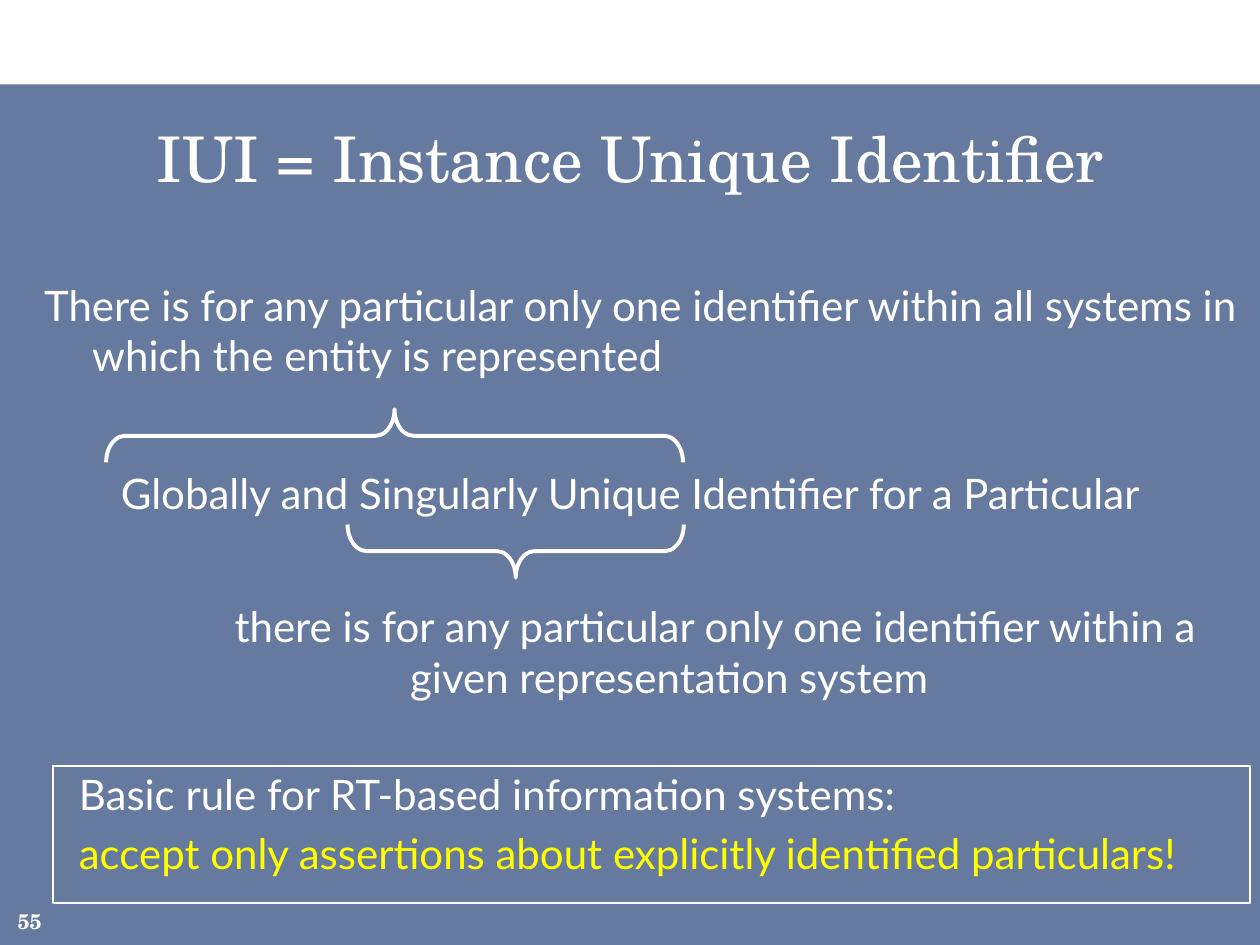
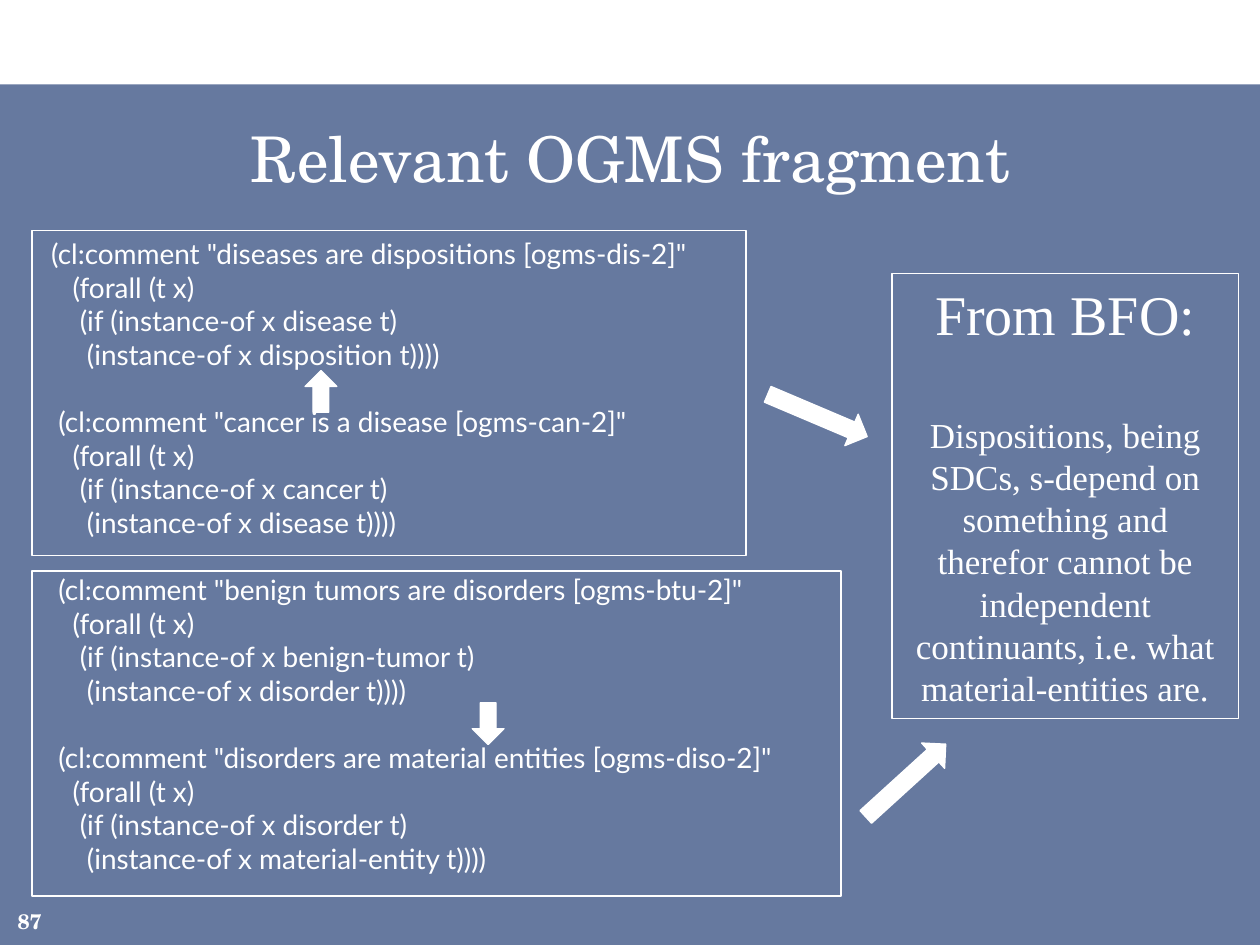
import lxml.etree
import pptx
import pptx.dml.color
import pptx.enum.shapes
import pptx.enum.text
import pptx.oxml.ns
import pptx.util

Cm = pptx.util.Cm
Pt = pptx.util.Pt
ALIGN = pptx.enum.text.PP_ALIGN
ANCHOR = pptx.enum.text.MSO_ANCHOR
PRESET = pptx.enum.shapes.MSO_SHAPE

COLORS = {"navy": "002060", "white": "FFFFFF", "yellow": "FFFF00"}
FONTS = {"title": "TeX Gyre Schola", "body": "Lato", "quote": "Times New Roman"}
TITLE_ONLY = 5
HANG = 0.97
PARAGRAPH_GAP = Pt(4.8)


def set_values(target, values):
    for name, value in values.items():
        setattr(target, name, value)


def rgb(color):
    return pptx.dml.color.RGBColor.from_string(COLORS[color])


class Deck:
    def __init__(self):
        self.presentation = pptx.Presentation()
        set_values(self.presentation,
                   {"slide_width": Cm(25.4), "slide_height": Cm(19.05)})
        self.slide = None

    def start_slide(self, title, number):
        layout = self.presentation.slide_layouts[TITLE_ONLY]
        self.slide = self.presentation.slides.add_slide(layout)
        self.add_band()
        heading = self.slide.shapes.title
        set_values(heading, self.place(0.64, 2.11, 24.13, 2.11))
        heading.text_frame.vertical_anchor = ANCHOR.MIDDLE
        self.fill_paragraph(heading.text_frame.paragraphs[0], title, 36, "title",
                            alignment=ALIGN.CENTER)
        corner = self.add_text((0, 18.01, 0.84, 0.81))
        set_values(corner, {"vertical_anchor": ANCHOR.BOTTOM, "margin_left": 0,
                            "margin_right": 0, "margin_top": 0, "margin_bottom": 0})
        self.fill_paragraph(corner.paragraphs[0], str(number), 12, "title",
                            bold=True, alignment=ALIGN.RIGHT)

    @staticmethod
    def place(left, top, width, height):
        return {"left": Cm(left), "top": Cm(top),
                "width": Cm(width), "height": Cm(height)}

    def add_band(self):
        """Lay the translucent band behind everything else on the slide."""
        band = self.add_preset(PRESET.RECTANGLE, (0, 1.7, 25.4, 17.35),
                               fill="navy", line=None)
        tint = band._element.spPr.find(".//" + pptx.oxml.ns.qn("a:srgbClr"))
        lxml.etree.SubElement(tint, pptx.oxml.ns.qn("a:alpha"), val="60000")
        band._element.getparent().insert(2, band._element)

    def add_preset(self, preset, box, fill=None, line=1, rotation=0):
        shape = self.slide.shapes.add_shape(preset, *map(Cm, box))
        shape.shadow.inherit = False
        shape.rotation = rotation
        if fill:
            shape.fill.solid()
            shape.fill.fore_color.rgb = rgb(fill)
        else:
            shape.fill.background()
        if line:
            shape.line.color.rgb = rgb("white")
            shape.line.width = Pt(line)
        else:
            shape.line.fill.background()
        return shape

    def add_brace(self, box, rotation):
        brace = self.add_preset(PRESET.RIGHT_BRACE, box, line=2.25, rotation=rotation)
        brace.adjustments[0] = 0.358

    def add_arrow(self, box, rotation):
        self.add_preset(PRESET.RIGHT_ARROW, box, "white", 0.75, rotation)

    def add_text(self, box):
        frame = self.slide.shapes.add_textbox(*map(Cm, box)).text_frame
        frame.word_wrap = True
        return frame

    def fill_paragraph(self, paragraph, text, size=24, font="body", color="white",
                       bold=False, margin=0, indent=0, **layout):
        properties = paragraph._p.get_or_add_pPr()
        properties.set("marL", str(int(Cm(margin))))
        properties.set("indent", str(int(Cm(indent))))
        set_values(paragraph, layout)
        run = paragraph.add_run()
        run.text = text
        set_values(run.font, {"size": Pt(size), "name": FONTS[font], "bold": bold})
        run.font.color.rgb = rgb(color)


def build_identifier_slide(deck):
    deck.start_slide("IUI = Instance Unique Identifier", 55)

    global_meaning = deck.add_text((0.64, 5.51, 24.56, 3.18))
    deck.fill_paragraph(global_meaning.paragraphs[0],
                        "There is for any particular only one identifier within all "
                        "systems in which the entity is represented",
                        margin=HANG, indent=-HANG)

    definition = deck.add_text((0.64, 9.3, 24.13, 1.27))
    deck.fill_paragraph(definition.paragraphs[0],
                        "Globally and Singularly Unique Identifier for a Particular",
                        alignment=ALIGN.CENTER)

    meaning_and_rule = deck.add_text((0.84, 11.99, 24.33, 6.2))
    deck.fill_paragraph(meaning_and_rule.paragraphs[0],
                        "there is for any particular only one identifier within a "
                        "given representation system",
                        margin=HANG, indent=1.85, alignment=ALIGN.CENTER)
    deck.fill_paragraph(meaning_and_rule.add_paragraph(),
                        "Basic rule for RT-based information systems:",
                        margin=0.5, space_before=Pt(38.4))
    deck.fill_paragraph(meaning_and_rule.add_paragraph(),
                        "accept only assertions about explicitly identified particulars!",
                        color="yellow", margin=0.5, space_before=PARAGRAPH_GAP)

    deck.add_brace((9.86, 7.72, 1.07, 6.78), 90)
    deck.add_brace((7.42, 2.97, 1.07, 11.63), 270)
    deck.add_preset(PRESET.RECTANGLE, (1.07, 15.44, 24.13, 2.77))


def build_fragment_slide(deck):
    deck.start_slide("Relevant OGMS fragment", 87)

    axioms = [
        (' (cl:comment "diseases are dispositions [ogms-dis-2]"',
         "disease", "disposition"),
        ('  (cl:comment "cancer is a disease [ogms-can-2]"',
         "cancer", "disease"),
        ('  (cl:comment "benign tumors are disorders [ogms-btu-2]"',
         "benign-tumor", "disorder"),
        ('  (cl:comment "disorders are material entities [ogms-diso-2]"',
         "disorder", "material-entity"),
    ]
    code = deck.add_text((0.64, 4.65, 24.13, 13.77))
    for position, (comment, child, parent) in enumerate(axioms):
        first = code.add_paragraph() if position else code.paragraphs[0]
        deck.fill_paragraph(first, comment, 16,
                            space_before=Pt(19.2 if position else 0))
        for line in ("    (forall (t x)",
                     f"     (if (instance-of x {child} t)",
                     f"      (instance-of x {parent} t))))"):
            deck.fill_paragraph(code.add_paragraph(), line, 16)

    bfo = deck.add_preset(PRESET.RECTANGLE, (17.98, 5.51, 6.99, 8.97), line=0.75)
    set_values(bfo.text_frame, {"word_wrap": True, "vertical_anchor": ANCHOR.TOP})
    deck.fill_paragraph(bfo.text_frame.paragraphs[0], "From BFO:", 32, "quote",
                        alignment=ALIGN.CENTER, line_spacing=Pt(38.4))
    deck.fill_paragraph(bfo.text_frame.add_paragraph(),
                        "Dispositions, being SDCs, s-depend on something and therefor "
                        "cannot be independent continuants, i.e. what "
                        "material-entities are.", 20, "quote",
                        alignment=ALIGN.CENTER, line_spacing=Pt(24),
                        space_before=Pt(38.4))

    for top, width in ((4.65, 14.4), (11.51, 16.31)):
        deck.add_preset(PRESET.RECTANGLE, (0.64, top, width, 6.55))
    for left, top, rotation in ((6.05, 7.57, 270), (9.42, 14.27, 90)):
        deck.add_arrow((left, top, 0.84, 0.64), rotation)
    for left, top, rotation in ((15.39, 8.03, 23), (17.17, 15.39, 317.7)):
        deck.add_arrow((left, top, 2.18, 0.69), rotation)


def main():
    deck = Deck()
    build_identifier_slide(deck)
    build_fragment_slide(deck)
    deck.presentation.save("out.pptx")


if __name__ == "__main__":
    main()
